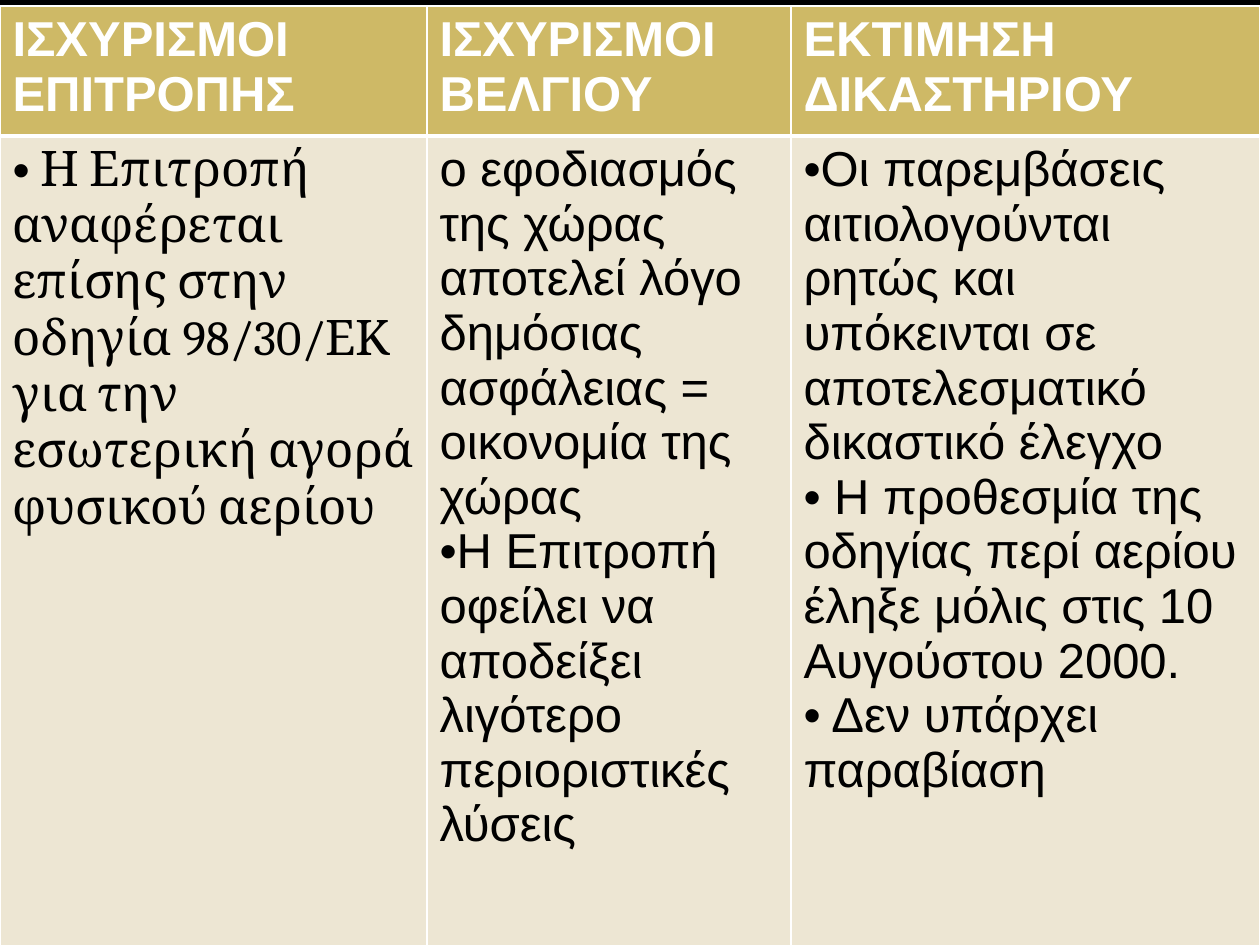
from dataclasses import dataclass

from lxml.etree import SubElement
from pptx import Presentation
from pptx.dml.color import RGBColor as Rgb
from pptx.oxml import parse_xml
from pptx.oxml.ns import nsdecls, qn
from pptx.util import Pt

PX = 914400 // 126


@dataclass(frozen=True)
class Theme:
    """Colours, fonts and sizes of the slide."""
    background: str = "000000"
    header_fill: str = "CEB966"
    body_fill: str = "EDE6D3"
    border: str = "FFFFFF"
    header_text: str = "FFFFFF"
    body_text: str = "000000"
    sans: str = "Arial"
    serif: str = "Cambria"
    size: int = 28


THEME = Theme()
COLUMN_WIDTHS = (427, 364, 469)
ROW_HEIGHTS = (130, 819)
HEADINGS = ("ΙΣΧΥΡΙΣΜΟΙ ΕΠΙΤΡΟΠΗΣ", "ΙΣΧΥΡΙΣΜΟΙ ΒΕΛΓΙΟΥ", "ΕΚΤΙΜΗΣΗ ΔΙΚΑΣΤΗΡΙΟΥ")
ARGUMENTS = (
    (THEME.serif, (
        "• Η Επιτροπή αναφέρεται επίσης στην οδηγία 98/30/ΕΚ για την "
        "εσωτερική αγορά φυσικού αερίου",
    )),
    (THEME.sans, (
        "ο εφοδιασμός της χώρας αποτελεί λόγο δημόσιας ασφάλειας = "
        "οικονομία της χώρας",
        "•Η Επιτροπή οφείλει να αποδείξει λιγότερο περιοριστικές λύσεις",
    )),
    (THEME.sans, (
        "•Οι παρεμβάσεις αιτιολογούνται ρητώς και υπόκεινται σε "
        "αποτελεσματικό δικαστικό έλεγχο",
        "• Η προθεσμία της οδηγίας περί αερίου έληξε μόλις στις 10 "
        "Αυγούστου 2000.",
        "• Δεν υπάρχει παραβίαση",
    )),
)


def add_bullet(paragraph):
    """Give a paragraph a round bullet."""
    properties = paragraph._p.get_or_add_pPr()
    SubElement(properties, qn("a:buFont")).set("typeface", THEME.sans)
    SubElement(properties, qn("a:buChar")).set("char", "•")


def set_borders(cell, top=1, bottom=1):
    """Draw the four border lines of a cell, with widths in points."""
    properties = cell._tc.get_or_add_tcPr()
    widths = {"lnL": 1, "lnR": 1, "lnT": top, "lnB": bottom}
    for index, (side, width) in enumerate(widths.items()):
        properties.insert(index, parse_xml(
            f'<a:{side} {nsdecls("a")} w="{Pt(width)}"><a:solidFill>'
            f'<a:srgbClr val="{THEME.border}"/></a:solidFill></a:{side}>'))


def fill_cell(cell, lines, face, fill, colour, bold=False):
    """Colour a cell and write its lines, bulleting those marked with •."""
    cell.fill.solid()
    cell.fill.fore_color.rgb = Rgb.from_string(fill)
    frame = cell.text_frame
    for index, line in enumerate(lines):
        paragraph = frame.add_paragraph() if index else frame.paragraphs[0]
        paragraph.text = line.removeprefix("•")
        if line.startswith("•"):
            add_bullet(paragraph)
        font = paragraph.font
        font.name, font.size, font.bold = face, Pt(THEME.size), bold
        font.color.rgb = Rgb.from_string(colour)


def add_arguments_table(slide, left, top):
    """Place the table of claims and the court's assessment."""
    table = slide.shapes.add_table(
        len(ROW_HEIGHTS), len(COLUMN_WIDTHS), left * PX, top * PX,
        sum(COLUMN_WIDTHS) * PX, sum(ROW_HEIGHTS) * PX).table
    table.horz_banding = False
    for column, width in zip(table.columns, COLUMN_WIDTHS):
        column.width = width * PX
    for row, height in zip(table.rows, ROW_HEIGHTS):
        row.height = height * PX
    for index, (heading, (face, lines)) in enumerate(zip(HEADINGS, ARGUMENTS)):
        header, body = table.cell(0, index), table.cell(1, index)
        fill_cell(header, [heading], THEME.sans, THEME.header_fill,
                  THEME.header_text, bold=True)
        fill_cell(body, lines, face, THEME.body_fill, THEME.body_text)
        set_borders(header, bottom=3)
        set_borders(body, top=3)


def main():
    """Build and save the presentation."""
    deck = Presentation()
    deck.slide_width, deck.slide_height = 1260 * PX, 945 * PX
    slide = deck.slides.add_slide(deck.slide_layouts[6])
    background = slide.background.fill
    background.solid()
    background.fore_color.rgb = Rgb.from_string(THEME.background)
    add_arguments_table(slide, 0, 6)
    deck.save("out.pptx")


if __name__ == "__main__":
    main()
